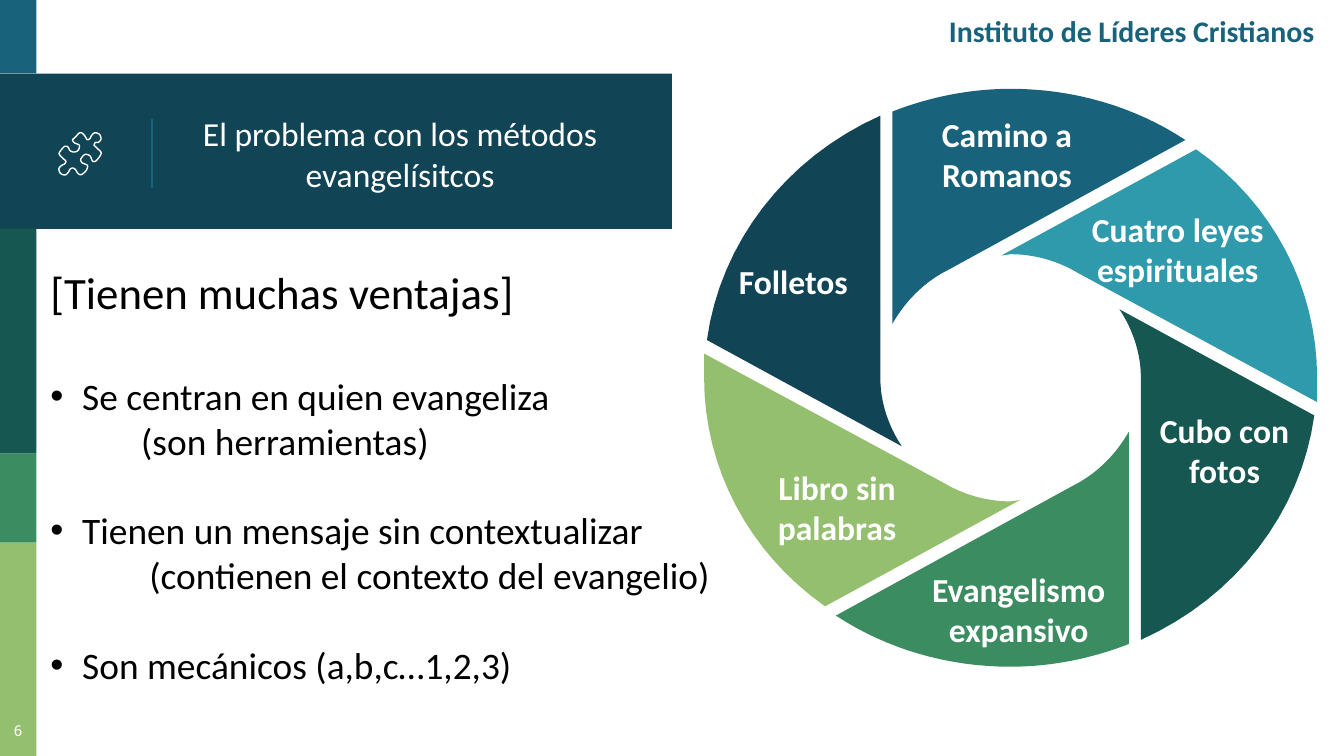
from dataclasses import dataclass

from lxml import etree
from pptx import Presentation
from pptx.dml.color import RGBColor
from pptx.enum.shapes import MSO_CONNECTOR, MSO_SHAPE
from pptx.enum.text import MSO_ANCHOR, MSO_AUTO_SIZE, PP_ALIGN
from pptx.oxml.ns import qn
from pptx.util import Pt

LEFT, CENTER, RIGHT = PP_ALIGN.LEFT, PP_ALIGN.CENTER, PP_ALIGN.RIGHT
TOP, MIDDLE = MSO_ANCHOR.TOP, MSO_ANCHOR.MIDDLE
RECTANGLE, STRAIGHT = MSO_SHAPE.RECTANGLE, MSO_CONNECTOR.STRAIGHT
NO_AUTOFIT = MSO_AUTO_SIZE.NONE


@dataclass(frozen=True)
class Theme:
    blue: str = "18637B"
    navy: str = "114454"
    teal: str = "309AAD"
    pine: str = "165751"
    green: str = "3B8D61"
    lime: str = "94BF6E"
    white: str = "FFFFFF"
    black: str = "000000"
    font: str = "Calibri"
    number_font: str = "Roboto Slab"
    heading: int = 24
    bullet: int = 20
    label: int = 18
    header: int = 16
    number: int = 8


THEME = Theme()
WIDTH, HEIGHT = 720, 405
STRIP_WIDTH = 19.5
BAR_TOP, BAR_BOTTOM = 39.4, 122.6
WHEEL_CENTER = (541.4, 202.4)
LABEL_WIDTH, LABEL_HEIGHT = 125, 80

# Blade outlines around the wheel centre: one point is a straight side,
# three points are a Bézier curve. The opposite blade is the point reflection.
BLADE_TOP = [
    [(-33.8, -57.6)], [(93.6, -127.4)],
    [(66.2, -145.4), (33.8, -154.8), (0, -154.8)],
    [(-21.6, -154.8), (-43.2, -150.5), (-63.4, -142.6)],
    [(-63.4, -28.8)],
    [(-56.9, -40.3), (-46.8, -51.1), (-33.8, -57.6)],
]
BLADE_UPPER_RIGHT = [
    [(36, -56.2)], [(164.2, 13)], [(164.2, 0)],
    [(164.2, -48.2), (140.4, -93.6), (99.4, -122.4)],
    [(-5, -65.5)], [(0, -66.2)],
    [(13, -66.2), (25.2, -62.6), (36, -56.2)],
]
BLADE_LOWER_RIGHT = [
    [(162.7, 20.2)], [(58.3, -36.7)],
    [(65.5, -25.9), (69.8, -13), (69.8, 0)],
    [(69.8, 140.4)],
    [(121, 117.4), (155.5, 72), (162.7, 20.2)],
]
# Outline, side of the wheel, colour, label, label centre
BLADES = [
    (BLADE_LOWER_RIGHT, 1, THEME.pine, "Cubo con\nfotos", (656, 241)),
    (BLADE_UPPER_RIGHT, -1, THEME.lime, "Libro sin\npalabras", (448.5, 271.5)),
    (BLADE_TOP, 1, THEME.blue, "Camino a\nRomanos", (539.5, 82.5)),
    (BLADE_LOWER_RIGHT, -1, THEME.navy, "Folletos", (425, 150.5)),
    (BLADE_TOP, -1, THEME.green, "Evangelismo\nexpansivo", (545.8, 326.5)),
    (BLADE_UPPER_RIGHT, 1, THEME.teal, "Cuatro leyes\nespirituales", (631, 133.5)),
]
# Knots of the puzzle piece, in hundredths of an inch
PUZZLE = [
    (71, 106), (73, 106), (75, 104), (75, 102), (74, 100), (72, 99), (70, 99),
    (68, 101), (67, 103), (65, 104), (63, 101), (61, 99), (59, 99), (57, 101),
    (55, 103), (54, 104), (55, 106), (57, 107), (59, 108), (59, 110), (58, 112),
    (56, 113), (54, 113), (52, 112), (51, 110), (50, 109), (48, 109), (46, 111),
    (44, 114), (45, 116), (47, 118), (49, 120), (48, 122), (46, 123), (44, 125),
    (44, 127), (45, 129), (47, 130), (49, 130), (51, 128), (52, 126), (54, 125),
    (56, 126), (58, 129), (60, 130), (62, 129), (64, 127), (65, 125), (65, 123),
    (63, 122), (61, 121), (60, 119), (61, 117), (63, 115), (65, 115), (67, 116),
    (68, 118), (69, 120), (71, 120), (73, 118), (75, 115), (75, 113), (73, 111),
    (71, 109), (70, 108),
]


def trace(segments, steps):
    """Turn straight and Bézier segments into a list of points."""
    points = []
    for segment in segments:
        if len(segment) == 1:
            points += segment
            continue
        knots = [points[-1], *segment]
        for step in range(1, steps + 1):
            t = step / steps
            weights = ((1 - t) ** 3, 3 * t * (1 - t) ** 2, 3 * t * t * (1 - t), t ** 3)
            points.append(tuple(sum(w * knot[axis] for w, knot in zip(weights, knots))
                                for axis in (0, 1)))
    return points


def smooth_loop(knots):
    """Join knots by Bézier segments into a smooth closed loop."""
    segments = [[knots[0]]]
    for i, start in enumerate(knots):
        before, end, after = (knots[(i + k) % len(knots)] for k in (-1, 1, 2))
        segments.append([
            tuple(s + (e - b) / 6 for s, e, b in zip(start, end, before)),
            tuple(e - (a - s) / 6 for s, e, a in zip(start, end, after)),
            end,
        ])
    return segments


def write(para, text, *, size, color, bold=False, font=THEME.font, align=LEFT,
          before=0, margin=0, bullet=None):
    properties = para._p.get_or_add_pPr()
    properties.set("marL", str(Pt(margin)))
    properties.set("indent", str(-Pt(margin) if bullet else 0))
    mark = etree.SubElement(properties, qn("a:buChar" if bullet else "a:buNone"))
    if bullet:
        mark.set("char", bullet)
    para.alignment = align
    para.space_before = Pt(before)
    span = para.add_run()
    span.text = text
    span.font.name, span.font.size, span.font.bold = font, Pt(size), bold
    span.font.color.rgb = RGBColor.from_string(color)


class Page:
    def __init__(self, deck, theme):
        self.theme = theme
        self.slide = deck.slides.add_slide(deck.slide_layouts[1])

    def rectangle(self, left, top, width, height, color):
        box = self.slide.shapes.add_shape(RECTANGLE, Pt(left), Pt(top), Pt(width), Pt(height))
        box.shadow.inherit = False
        box.fill.solid()
        box.fill.fore_color.rgb = RGBColor.from_string(color)
        box.line.fill.background()

    def line(self, x1, y1, x2, y2, color):
        line = self.slide.shapes.add_connector(STRAIGHT, Pt(x1), Pt(y1), Pt(x2), Pt(y2))
        line.line.color.rgb = RGBColor.from_string(color)
        line.line.width = Pt(0.75)
        etree.SubElement(line._element.spPr, qn("a:effectLst"))

    def outline(self, points, fill=None, stroke=None, shapes=None):
        corners = [(Pt(x), Pt(y)) for x, y in points]
        builder = (shapes or self.slide.shapes).build_freeform(*corners[0])
        builder.add_line_segments(corners[1:], close=True)
        shape = builder.convert_to_shape()
        shape.shadow.inherit = False
        for paint, color in ((shape.fill, fill), (shape.line.fill, stroke)):
            if color:
                paint.solid()
                paint.fore_color.rgb = RGBColor.from_string(color)
            else:
                paint.background()
        if stroke:
            shape.line.width = Pt(0.75)

    def frame(self, box, anchor, inset=7.2):
        frame = box.text_frame
        frame.word_wrap, frame.auto_size = True, NO_AUTOFIT
        frame.vertical_anchor = anchor
        frame.margin_left = frame.margin_right = Pt(inset)
        frame.margin_top = frame.margin_bottom = Pt(inset)
        return frame

    def fill_lines(self, frame, lines):
        for i, (text, style) in enumerate(lines):
            write(frame.add_paragraph() if i else frame.paragraphs[0], text, **style)

    def text(self, left, top, width, height, text, anchor=MIDDLE, inset=7.2, **style):
        box = self.slide.shapes.add_textbox(Pt(left), Pt(top), Pt(width), Pt(height))
        self.fill_lines(self.frame(box, anchor, inset),
                        [(line, style) for line in text.split("\n")])

    def placeholder(self, index, left, top, width, height, lines, anchor):
        box = self.slide.placeholders[index]
        box.left, box.top, box.width, box.height = Pt(left), Pt(top), Pt(width), Pt(height)
        box.element.getparent().append(box.element)  # bring in front of the bar
        self.fill_lines(self.frame(box, anchor), lines)


def main():
    deck = Presentation()
    deck.slide_width, deck.slide_height = Pt(WIDTH), Pt(HEIGHT)
    page = Page(deck, THEME)
    theme = page.theme

    # Side strip and title bar
    edges = [0, BAR_TOP, BAR_BOTTOM, 243, 290.8, HEIGHT]
    colors = [theme.blue, theme.navy, theme.pine, theme.green, theme.lime]
    for top, bottom, color in zip(edges, edges[1:], colors):
        width = WIDTH / 2 if top == BAR_TOP else STRIP_WIDTH
        page.rectangle(0, top, width, bottom - top, color)
    page.line(81.5, 64, 81.5, 100.8, theme.blue)

    # Title, puzzle icon, page number and header
    title = {"size": theme.label, "color": theme.white, "align": CENTER}
    page.placeholder(0, 88, 42, 252.7, 80.6, [
        ("El problema con los métodos", title), ("evangelísitcos", title)], MIDDLE)
    piece = [(x * 0.72, y * 0.72) for x, y in trace(smooth_loop(PUZZLE), 4)]
    page.outline(piece, stroke=theme.white)
    page.text(0, 386.6, STRIP_WIDTH, 14, "6", anchor=TOP, inset=0, size=theme.number,
              color=theme.white, font=theme.number_font, align=CENTER)
    page.text(445, 0, 266.4, 33, "Instituto de Líderes Cristianos", size=theme.header,
              color=theme.blue, bold=True, align=RIGHT)

    # Argument list
    heading = {"size": theme.heading, "color": theme.black}
    detail = {"size": theme.bullet, "color": theme.black}
    point = {**detail, "bullet": "•", "margin": 17, "before": 24}
    page.placeholder(1, 19.8, 134.6, 369, 237.6, [
        ("[Tienen muchas ventajas]", heading),
        ("Se centran en quien evangeliza", {**point, "before": 29.3}),
        ("(son herramientas)", {**detail, "margin": 48.6}),
        ("Tienen un mensaje sin contextualizar", point),
        ("(contienen el contexto del evangelio)", {**detail, "margin": 53}),
        ("Son mecánicos (a,b,c…1,2,3)", point),
    ], TOP)

    # Wheel of methods
    wheel = page.slide.shapes.add_group_shape()
    center_x, center_y = WHEEL_CENTER
    for outline, side, color, _, _ in BLADES:
        points = [(center_x + side * x, center_y + side * y) for x, y in trace(outline, 16)]
        page.outline(points, fill=color, shapes=wheel.shapes)
    for _, _, _, label, (x, y) in BLADES:
        page.text(x - LABEL_WIDTH / 2, y - LABEL_HEIGHT / 2, LABEL_WIDTH, LABEL_HEIGHT, label,
                  size=theme.label, color=theme.white, bold=True, align=CENTER)

    deck.save("out.pptx")


if __name__ == "__main__":
    main()
